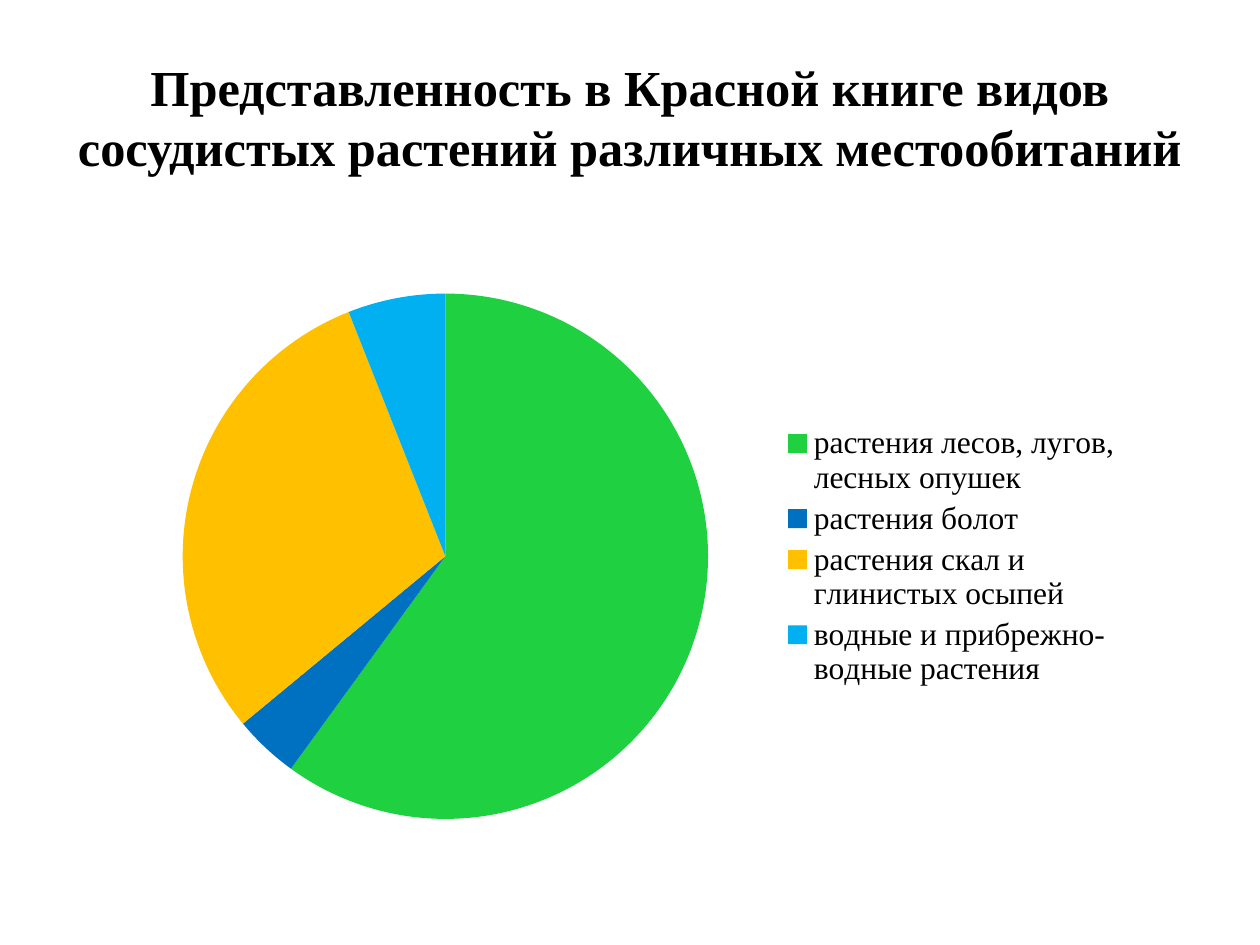
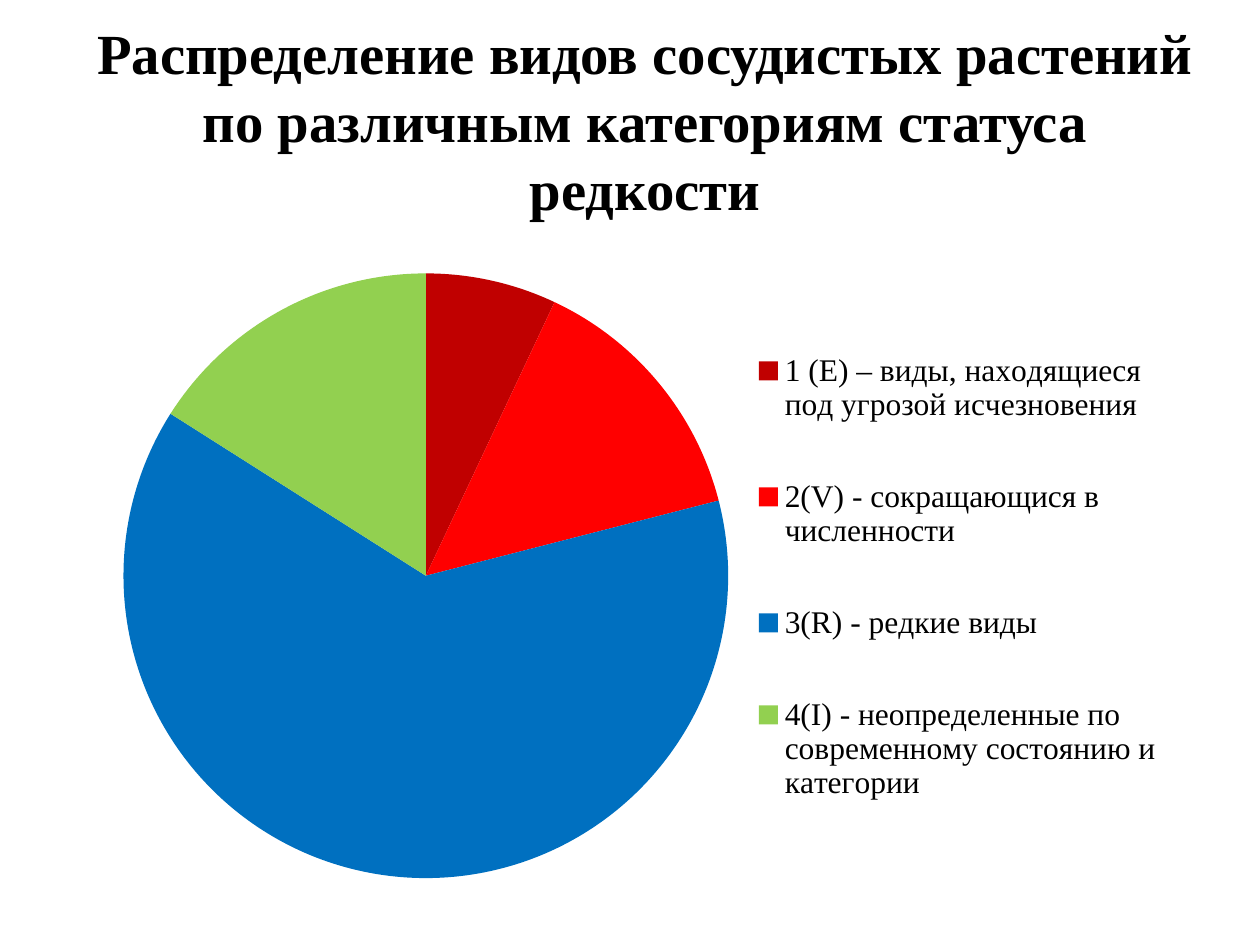
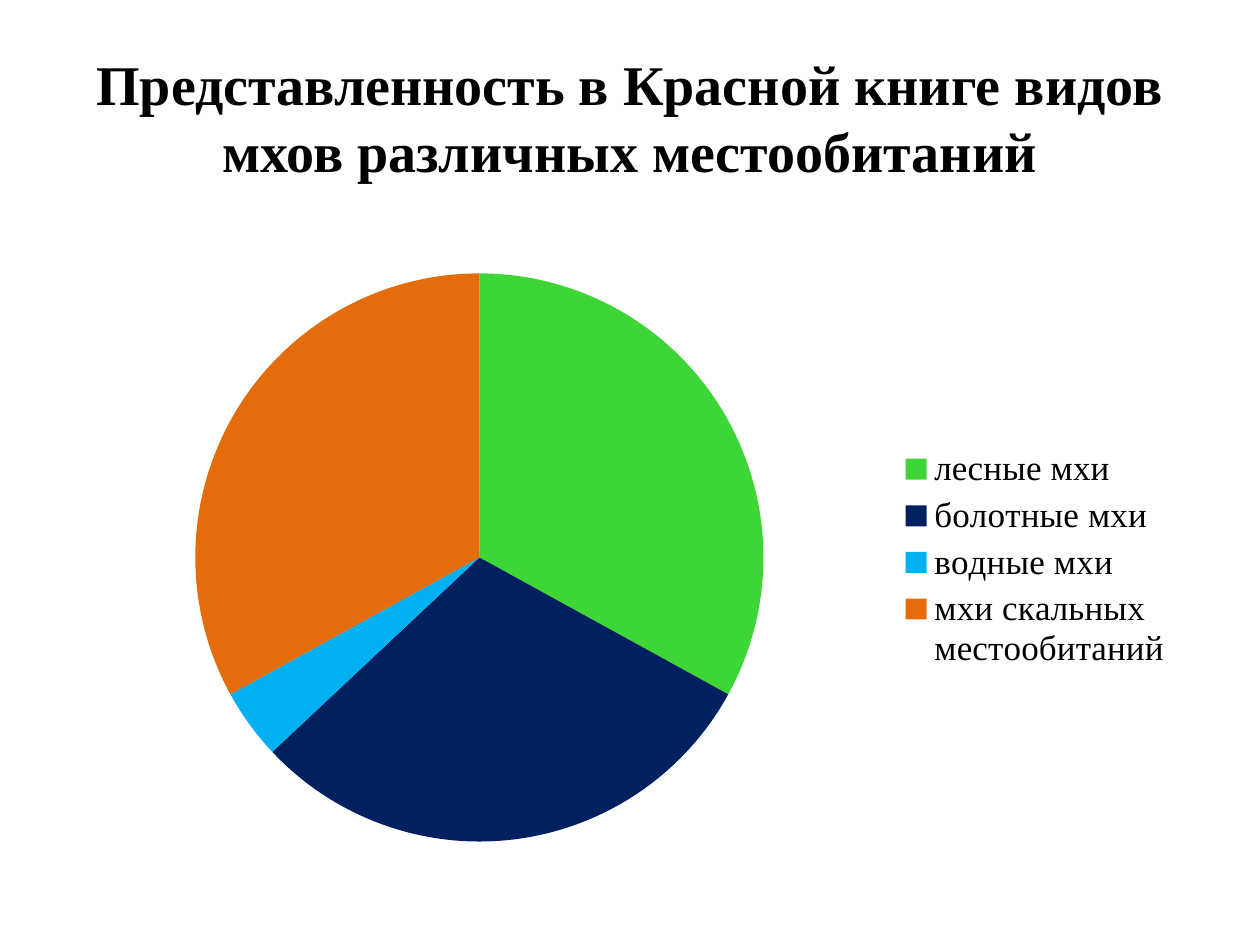
"""Build three slides of pie charts on red-listed plants."""
from lxml import etree
from pptx import Presentation
from pptx.chart.data import CategoryChartData
from pptx.dml.color import RGBColor
from pptx.enum import chart as ec, text as et
from pptx.oxml.ns import qn
from pptx.util import Inches, Pt

FACE = "Times New Roman"
BLACK = "000000"
TITLE = (0.5, 0.3, 9, 1.25)
GREEN, BLUE, SKY = "1FD141", "0070C0", "00B0F0"


def paint(color, code):
    """Set a colour from a hex string."""
    color.rgb = RGBColor.from_string(code)


def style(font, face, size):
    """Set face, size and black colour of a font."""
    font.name, font.size = face, Pt(size)
    paint(font.color, BLACK)


def add_title(slide, words, size, box=TITLE):
    """Fill and place the title."""
    title = slide.shapes.title
    title.left, title.top, title.width, title.height = map(Inches, box)
    frame = title.text_frame
    frame.text = words
    frame.word_wrap = True
    frame.auto_size = et.MSO_AUTO_SIZE.NONE
    frame.vertical_anchor = et.MSO_ANCHOR.MIDDLE
    line = frame.paragraphs[0]
    line.alignment = et.PP_ALIGN.CENTER
    font = line.runs[0].font
    style(font, FACE, size)
    font.bold = True


def place(part, index, box, area, inner=False):
    """Fix a chart part at a slide box inside the chart area."""
    for old in part.findall(qn("c:layout")):
        part.remove(old)
    layout = etree.Element(qn("c:layout"))
    manual = etree.SubElement(layout, qn("c:manualLayout"))
    left, top, width, height = box
    pairs = [("layoutTarget", "inner")] if inner else []
    pairs += [("xMode", "edge"), ("yMode", "edge"),
              ("x", (left - area[0]) / area[2]),
              ("y", (top - area[1]) / area[3]),
              ("w", width / area[2]), ("h", height / area[3])]
    for name, value in pairs:
        etree.SubElement(manual, qn("c:" + name)).set("val", str(value))
    part.insert(index, layout)


def add_pie(slide, area, pie, key, size, parts):
    """Add a pie with its legend; parts hold label, value and colour."""
    data = CategoryChartData()
    data.categories = [label for label, _, _ in parts]
    data.add_series("Series 1", [value for _, value, _ in parts])
    chart = slide.shapes.add_chart(
        ec.XL_CHART_TYPE.PIE, *map(Inches, area), data).chart
    style(chart.font, "Calibri", 10)
    chart.has_title = False
    chart.has_legend = True
    legend = chart.legend
    legend.position = ec.XL_LEGEND_POSITION.RIGHT
    legend.include_in_layout = False
    style(legend.font, FACE, size)
    plot = chart.plots[0]
    plot.vary_by_categories = True
    for index, (_, _, code) in enumerate(parts):
        fill = plot.series[0].points[index].format.fill
        fill.solid()
        paint(fill.fore_color, code)
    root = legend._element.getparent()
    left, top, side = pie
    place(root.find(qn("c:plotArea")), 0, (left, top, side, side), area, True)
    place(legend._element, 1, key, area)


def main():
    """Build and save the slides."""
    deck = Presentation()
    deck.slide_width, deck.slide_height = Inches(10), Inches(7.5)
    plants, rare, moss = [
        deck.slides.add_slide(deck.slide_layouts[5]) for _ in range(3)]

    add_title(plants, "Представленность в Красной книге видов сосудистых "
              "растений различных местообитаний", 28.8)
    add_pie(plants, (0.94, 2.19, 8.05, 4.45), (1.45, 2.33, 4.17),
            (6.15, 3.33, 2.8, 2.17), 18, [
        ("растения лесов, лугов, лесных опушек", 60, GREEN),
        ("растения болот", 4, BLUE),
        ("растения скал и глинистых осыпей", 30, "FFC000"),
        ("водные и прибрежно-водные растения", 6, SKY)])

    add_title(rare, "Распределение видов сосудистых растений по различным "
              "категориям статуса редкости", 32.4, (0.62, 0.48, 9, 0.94))
    add_pie(rare, (0.78, 2.03, 8.52, 5.08), (0.98, 2.17, 4.8),
            (6, 2.35, 3.25, 4.46), 18, [
        ("1 (E) – виды, находящиеся под угрозой исчезновения", 7, "C00000"),
        ("2(V) - сокращающися в численности", 14, "FF0000"),
        ("3(R) - редкие виды", 63, BLUE),
        ("4(I) - неопределенные по современному состоянию и категории",
         16, "92D050")])

    add_title(moss, "Представленность в Красной книге видов мхов "
              "различных местообитаний", 32)
    add_pie(moss, (0.55, 2.03, 8.83, 4.78), (1.55, 2.17, 4.51),
            (7.08, 3.51, 2.27, 1.85), 20, [
        ("лесные мхи", 33, "3ED636"),
        ("болотные мхи", 30, "002060"),
        ("водные мхи", 4, SKY),
        ("мхи скальных местообитаний", 33, "E46C0A")])

    deck.save("out.pptx")


if __name__ == "__main__":
    main()
